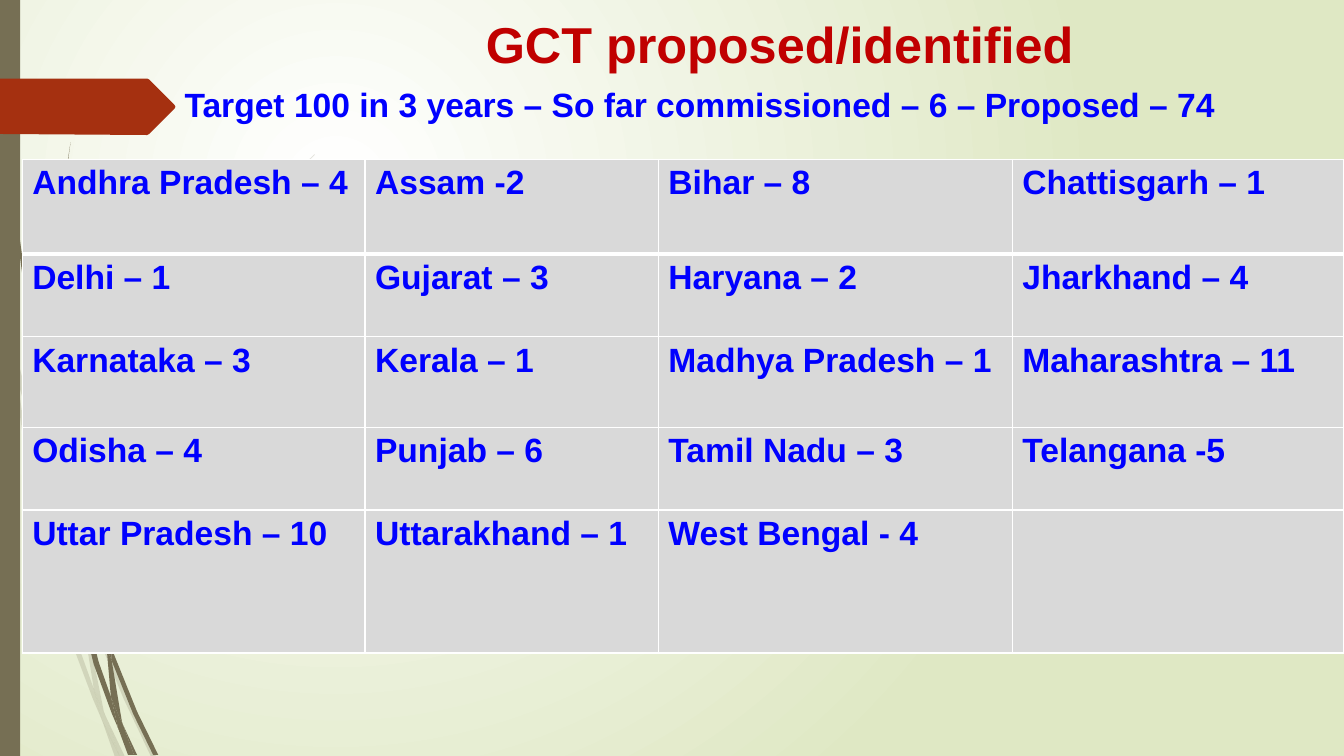
from lxml import etree
from pptx import Presentation
from pptx.dml.color import RGBColor
from pptx.enum.shapes import MSO_SHAPE
from pptx.enum.text import MSO_ANCHOR, PP_ALIGN
from pptx.oxml.ns import qn
from pptx.util import Pt

PX = 9144
RECT = MSO_SHAPE.RECTANGLE
TOP = MSO_ANCHOR.TOP
LEFT, MID = PP_ALIGN.LEFT, PP_ALIGN.CENTER
FONT = "Arial"
OLIVE, RUST, RED, BLUE = "766F54", "A53010", "C00000", "0000FF"
GREY, WHITE, LIME = "D9D9D9", "FFFFFF", "DFE8C4"

PALE = [
    [(11, 350), (9, 322), (0, 282), (0, 299), (10, 344)],
    [(58, 522), (84, 599), (85, 586), (62, 520), (14, 345), (17, 376)],
    [(92, 607), (88, 596), (88, 610), (123, 694), (150, 751), (155, 751), (127, 692)],
    [(119, 751), (124, 751), (105, 711)],
    [(93, 683), (70, 619), (31, 469), (17, 376), (11, 350), (28, 470), (65, 621),
     (92, 693), (101, 714), (99, 707)],
    [(84, 599), (87, 646), (93, 683), (96, 692), (105, 711), (103, 706), (91, 646),
     (88, 610), (88, 608)],
    [(88, 584), (110, 462), (160, 349), (229, 245), (268, 198), (290, 175), (312, 154),
     (312, 153), (289, 175), (268, 197), (228, 244), (158, 348), (107, 461), (85, 584),
     (85, 586), (88, 596)],
    [(101, 714), (114, 751), (119, 751)],
    [(88, 608), (88, 610), (88, 596), (85, 586), (84, 599)],
    [(96, 692), (93, 683), (99, 707), (101, 714), (119, 751), (105, 711)],
]
DARK = [
    [(7, 110), (17, 233), (33, 355), (56, 477), (57, 481), (55, 457), (55, 453),
     (36, 355), (19, 232), (8, 109), (5, 48), (4, 0), (3, 0), (4, 48)],
    [(88, 592), (106, 645), (106, 633), (106, 631), (93, 590), (60, 472), (64, 505)],
    [(113, 649), (110, 641), (111, 656), (132, 708), (152, 749), (157, 749), (136, 706)],
    [(110, 691), (98, 657), (72, 556), (64, 505), (57, 477), (68, 557), (93, 659),
     (111, 708), (117, 722), (116, 717)],
    [(60, 472), (58, 453), (54, 349), (58, 245), (63, 193), (70, 141), (62, 193),
     (56, 245), (52, 349), (55, 449)],
    [(133, 749), (136, 749), (122, 719)],
    [(57, 477), (64, 505), (60, 472), (55, 449), (55, 453)],
    [(111, 633), (125, 552), (158, 476), (205, 406), (231, 374), (245, 359), (261, 344),
     (260, 344), (245, 358), (231, 373), (204, 405), (156, 474), (122, 551), (106, 631),
     (110, 641)],
    [(117, 722), (127, 749), (131, 749)],
    [(106, 645), (110, 691), (116, 706), (122, 719), (121, 716), (111, 656), (109, 651)],
    [(106, 645), (109, 651), (111, 656), (110, 641), (106, 631), (106, 633)],
    [(116, 706), (110, 691), (116, 717), (117, 722), (130, 749), (133, 749), (122, 719)],
]
ARROW = [(0, 78), (146, 78), (148, 79), (173, 104), (174, 106), (173, 108),
         (148, 133), (146, 134), (0, 133)]
STATES = [
    ["Andhra Pradesh – 4", "Assam -2", "Bihar – 8", "Chattisgarh – 1"],
    ["Delhi – 1", "Gujarat – 3", "Haryana – 2", "Jharkhand – 4"],
    ["Karnataka – 3", "Kerala – 1", "Madhya Pradesh – 1", "Maharashtra – 11"],
    ["Odisha – 4", "Punjab – 6", "Tamil Nadu – 3", "Telangana -5"],
    ["Uttar Pradesh – 10", "Uttarakhand – 1", "West Bengal - 4", ""],
]
COLS = [340, 291, 351, 329]
ROWS = [94, 82, 90, 82, 142]


def tint(color, code):
    """Set a colour from a hex string."""
    color.rgb = RGBColor.from_string(code)


def paint(shape, code, alpha=100):
    """Give a shape a plain fill without line or shadow."""
    shape.shadow.inherit = False
    shape.line.fill.background()
    shape.fill.solid()
    tint(shape.fill.fore_color, code)
    if alpha < 100:
        hue = shape.fill._xPr.find(".//" + qn("a:srgbClr"))
        etree.SubElement(hue, qn("a:alpha"), val=str(alpha * 1000))


def outline(shapes, points, code, alpha=100):
    """Draw a closed outline through the points."""
    pen = shapes.build_freeform(*points[0], scale=PX)
    pen.add_line_segments(points[1:], close=True)
    paint(pen.convert_to_shape(), code, alpha)


def wisps(slide, blades, alpha):
    """Draw a group of grass blades."""
    group = slide.shapes.add_group_shape()
    for blade in blades:
        outline(group.shapes, blade, OLIVE, alpha)


def style(frame, text, size, code, align=LEFT):
    """Write bold text into a frame."""
    frame.text = text
    para = frame.paragraphs[0]
    para.alignment = align
    for run in para.runs:
        run.font.name = FONT
        run.font.size = Pt(size)
        run.font.bold = True
        tint(run.font.color, code)


def label(slide, box, text, size, code, align=LEFT, inset=(10, 5)):
    """Add a text box with left and top insets."""
    frame = slide.shapes.add_textbox(*[n * PX for n in box]).text_frame
    frame.word_wrap = True
    frame.vertical_anchor = TOP
    frame.margin_left, frame.margin_top = [n * PX for n in inset]
    style(frame, text, size, code, align)


def border(cell, side, width):
    """Draw a white line on one side of a cell."""
    props = cell._tc.get_or_add_tcPr()
    line = etree.SubElement(props, qn("a:" + side), w=str(Pt(width)))
    fill = etree.SubElement(line, qn("a:solidFill"))
    etree.SubElement(fill, qn("a:srgbClr"), val=WHITE)


def grid(slide, left, top):
    """Add the table of states."""
    size = (len(ROWS), len(COLS))
    spot = [n * PX for n in (left, top, sum(COLS), sum(ROWS))]
    table = slide.shapes.add_table(*size, *spot).table
    table.first_row = table.horz_banding = False
    for col, width in zip(table.columns, COLS):
        col.width = width * PX
    for i, (row, height) in enumerate(zip(table.rows, ROWS)):
        row.height = height * PX
        for cell, text in zip(row.cells, STATES[i]):
            style(cell.text_frame, text, 24, BLUE)
            for side in ("lnL", "lnR", "lnT", "lnB"):
                thick = (i, side) in ((0, "lnB"), (1, "lnT"))
                border(cell, side, 3 if thick else 1)
            cell.fill.solid()
            tint(cell.fill.fore_color, GREY)


def glow(slide):
    """Fill the background with a round gradient."""
    fill = slide.background.fill
    fill.gradient()
    for stop, code in zip(fill.gradient_stops, (WHITE, LIME)):
        tint(stop.color, code)
    for i, stop in enumerate(fill.gradient_stops):
        stop.position = i
    line = slide.element.find(".//" + qn("a:lin"))
    ring = etree.Element(qn("a:path"), path="circle")
    etree.SubElement(ring, qn("a:fillToRect"), l="50000", t="50000", r="100000", b="100000")
    line.getparent().replace(line, ring)


def main():
    """Build the slide and save it."""
    deck = Presentation()
    deck.slide_width, deck.slide_height = 1333 * PX, 750 * PX
    slide = deck.slides.add_slide(deck.slide_layouts[6])
    glow(slide)
    wisps(slide, PALE, 20)
    wisps(slide, DARK, 100)
    bar = slide.shapes.add_shape(RECT, 0, 0, 20 * PX, 750 * PX)
    paint(bar, OLIVE)
    outline(slide.shapes, ARROW, RUST)
    label(slide, (286, 3, 975, 85), "GCT proposed/identified", 36, RED, MID, (10, 10))
    label(slide, (16, 75, 1318, 646),
          "Target 100 in 3 years – So far commissioned – 6 – Proposed – 74",
          24, BLUE, inset=(167, 8))
    grid(slide, 22, 158)
    deck.save("out.pptx")


if __name__ == "__main__":
    main()
